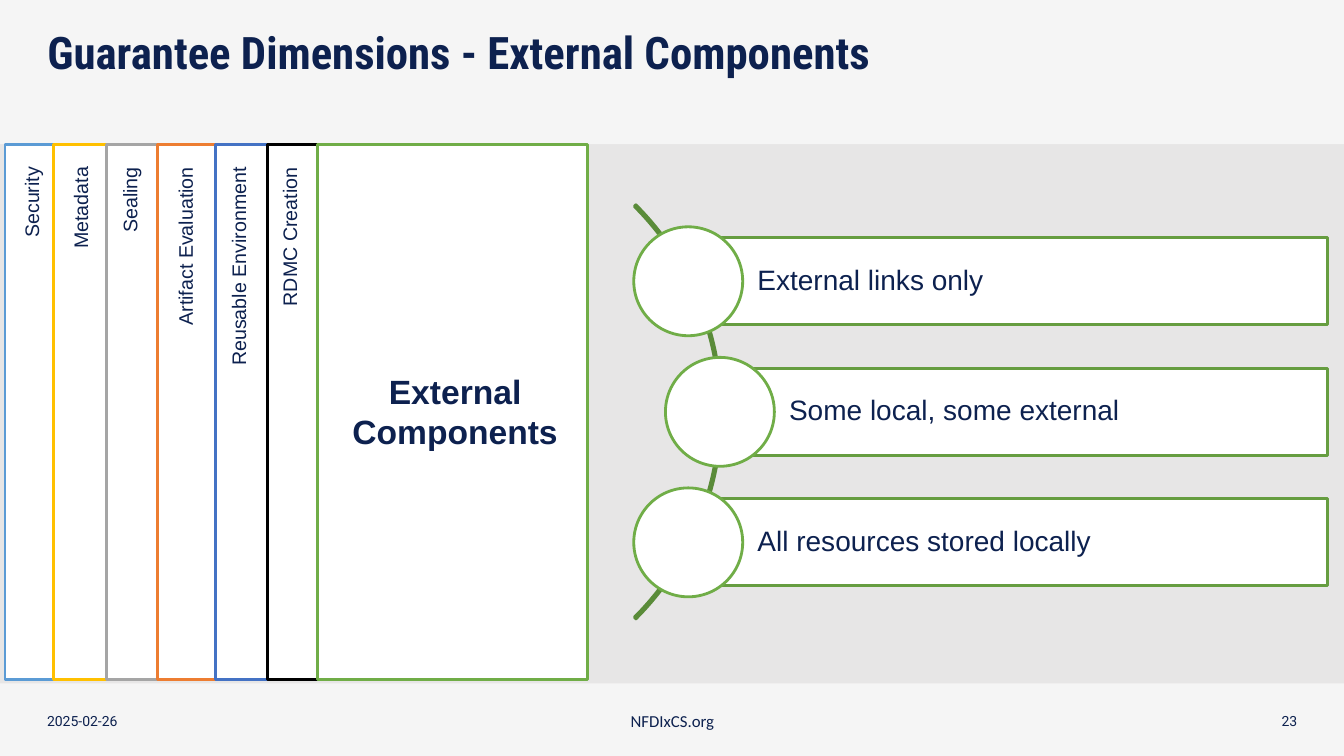
from lxml import etree
from pptx import Presentation
from pptx.dml.color import RGBColor
from pptx.enum.shapes import MSO_SHAPE
from pptx.enum.text import MSO_ANCHOR, MSO_AUTO_SIZE, PP_ALIGN
from pptx.oxml.ns import qn
from pptx.util import Pt

RECT, OVAL, ARC = MSO_SHAPE.RECTANGLE, MSO_SHAPE.OVAL, MSO_SHAPE.BLOCK_ARC
LEFT, CENTER, RIGHT = PP_ALIGN.LEFT, PP_ALIGN.CENTER, PP_ALIGN.RIGHT
TOP, MIDDLE = MSO_ANCHOR.TOP, MSO_ANCHOR.MIDDLE
NO_FIT = MSO_AUTO_SIZE.NONE

COLORS = {
    "ground": "E7E6E6", "white": "FFFFFF", "navy": "0D214F",
    "sky": "5B9BD5", "gold": "FFC000", "gray": "A5A5A5",
    "orange": "ED7D31", "blue": "4472C4", "black": "000000",
    "green": "70AD47", "bar green": "669D40", "arc green": "5A8B39",
}
WIDTH, HEIGHT = 960, 540
PANEL_TOP, PANEL_WIDTH, PANEL_HEIGHT = 103, 193, 382.3

# label, line colour, panel left, label centre, label length
TABS = [
    ("Security", "sky", 3.6, 22.7, 65.5),
    ("Metadata", "gold", 38.2, 57.6, 73.4),
    ("Sealing", "gray", 76.3, 92.9, 61.9),
    ("Artifact Evaluation", "orange", 112.3, 132.5, 128.2),
    ("Reusable Environment", "blue", 154.1, 170.6, 157),
    ("RDMC Creation", "black", 190.8, 207, 114.5),
]
LABEL_TOP, LABEL_HEIGHT = 111.4, 24.5

# label, centre of the circle
LEVELS = [
    ("External links only", 491.6),
    ("Some local, some external", 514.2),
    ("All resources stored locally", 491.6),
]
FIRST_LEVEL, LEVEL_STEP = 200.9, 93.25
BAR_RIGHT, BAR_HEIGHT, CIRCLE = 948.4, 62.2, 77.8


def rgb(name):
    return RGBColor.from_string(COLORS[name])


class SlideBuilder:
    def __init__(self, page):
        self.page = page
        page.background.fill.solid()
        page.background.fill.fore_color.rgb = rgb("ground")

    def set_text(self, shape, text, size, font="Arial", bold=False, align=LEFT,
                 anchor=TOP, insets=(7.2, 3.6, 7.2, 3.6), wrap=True,
                 spacing=1.0):
        frame = shape.text_frame
        frame.word_wrap = wrap
        frame.auto_size = NO_FIT
        frame.vertical_anchor = anchor
        (frame.margin_left, frame.margin_top,
         frame.margin_right, frame.margin_bottom) = map(Pt, insets)
        para = frame.paragraphs[0]
        para.alignment = align
        para.line_spacing = spacing
        span = para.add_run()
        span.text = text
        span.font.name = font
        span.font.size = Pt(size)
        span.font.bold = bold
        span.font.color.rgb = rgb("navy")

    def shape(self, kind, left, top, width, height, fill=None, line=None):
        shape = self.page.shapes.add_shape(
            kind, Pt(left), Pt(top), Pt(width), Pt(height))
        shape.shadow.inherit = False
        if fill:
            shape.fill.solid()
            shape.fill.fore_color.rgb = rgb(fill)
        else:
            shape.fill.background()
        if line:
            shape.line.color.rgb = rgb(line)
            shape.line.width = Pt(2)
        else:
            shape.line.fill.background()
        return shape

    def band(self, top, height):
        """Add a full-width white strip at 60 % opacity."""
        band = self.shape(RECT, 0, top, WIDTH, height, "white")
        color = band.element.spPr.find(qn("a:solidFill"))[0]
        etree.SubElement(color, qn("a:alpha"), val="60000")
        return band

    def title(self, text, behind):
        """Fill the title placeholder and place it just in front of a shape."""
        title = self.page.shapes.title
        title.left, title.top = Pt(26.6), Pt(18.7)
        title.width, title.height = Pt(907), Pt(84.3)
        self.set_text(title, text, 32, "Roboto Condensed", bold=True,
                      spacing=0.9)
        behind.element.addnext(title.element)

    def text(self, text, left, top, width, height, size, **style):
        box = self.page.shapes.add_textbox(
            Pt(left), Pt(top), Pt(width), Pt(height))
        self.set_text(box, text, size, **style)
        return box

    def panel(self, left, line):
        self.shape(RECT, left, PANEL_TOP, PANEL_WIDTH, PANEL_HEIGHT,
                   "white", line)

    def tab_label(self, text, center, length):
        """Add a label that reads upwards and ends at LABEL_TOP."""
        box = self.text(text, center - length / 2,
                        LABEL_TOP + (length - LABEL_HEIGHT) / 2,
                        length, LABEL_HEIGHT, 14, wrap=False)
        box.rotation = 270

    def arc(self, left, top, size):
        arc = self.shape(ARC, left, top, size, size, line="arc green")
        for index, value in enumerate((189, 27, 0.004)):
            arc.adjustments[index] = value

    def level(self, text, center_x, center_y):
        bar = self.shape(RECT, center_x, center_y - BAR_HEIGHT / 2,
                         BAR_RIGHT - center_x, BAR_HEIGHT,
                         "white", "bar green")
        self.set_text(bar, text, 20, anchor=MIDDLE, spacing=0.9,
                      insets=(49.4, 4.3, 4.3, 4.3))
        self.shape(OVAL, center_x - CIRCLE / 2, center_y - CIRCLE / 2,
                   CIRCLE, CIRCLE, "white", "green")


def main():
    deck = Presentation()
    deck.slide_width, deck.slide_height = Pt(WIDTH), Pt(HEIGHT)
    slide = SlideBuilder(deck.slides.add_slide(deck.slide_layouts[5]))

    slide.band(488.2, HEIGHT - 488.2)
    header = slide.band(0, PANEL_TOP)
    slide.title("Guarantee Dimensions - External Components", header)

    footers = [
        ("2025-02-26", 26.6, 216, 10, "Roboto", LEFT),
        ("NFDIxCS.org", 269.3, 422, 12, "Calibri", CENTER),
        ("23", 717.8, 216, 10, "Roboto", RIGHT),
    ]
    for text, left, width, size, font, align in footers:
        slide.text(text, left, 500.4, width, 28.8, size,
                   font=font, align=align, anchor=MIDDLE)

    for _, line, left, _, _ in TABS:
        slide.panel(left, line)
    slide.panel(226.9, "green")
    for text, _, _, center, length in TABS:
        slide.tab_label(text, center, length)
    slide.text("External Components", 243.4, 261.4, 163.4, 65.5, 24,
               bold=True, align=CENTER)

    slide.arc(97.2, 85, 418.3)
    for index, (text, center_x) in enumerate(LEVELS):
        slide.level(text, center_x, FIRST_LEVEL + index * LEVEL_STEP)

    deck.save("out.pptx")


if __name__ == "__main__":
    main()
